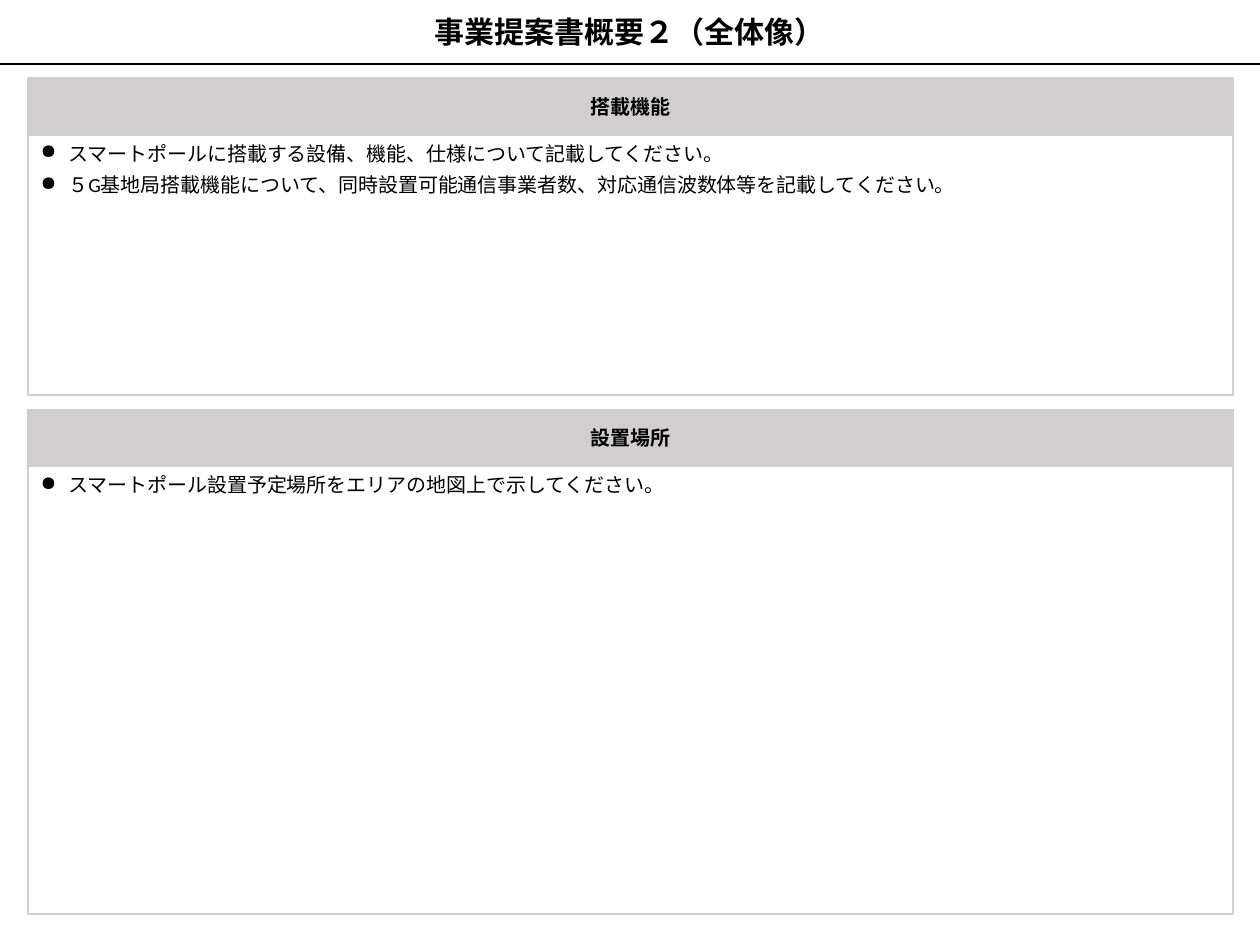
from dataclasses import dataclass

from lxml import etree
from pptx import Presentation
from pptx.dml.color import RGBColor
from pptx.enum.shapes import MSO_CONNECTOR, MSO_SHAPE
from pptx.enum.text import MSO_ANCHOR, PP_ALIGN
from pptx.oxml.ns import qn
from pptx.shapes.autoshape import Shape
from pptx.slide import Slide
from pptx.util import Inches, Pt

RECTANGLE = MSO_SHAPE.RECTANGLE
STRAIGHT = MSO_CONNECTOR.STRAIGHT
TOP, MIDDLE = MSO_ANCHOR.TOP, MSO_ANCHOR.MIDDLE
LEFT, CENTER = PP_ALIGN.LEFT, PP_ALIGN.CENTER

BLACK, WHITE, GRAY = "000000", "FFFFFF", "D0CECE"
PAGE_WIDTH, PAGE_HEIGHT = 14, 10.5
TITLE_HEIGHT = 0.71
PANEL_LEFT, PANEL_WIDTH = 0.31, 13.39
HEADER_HEIGHT = 0.63
BULLET_INDENT = 0.31


@dataclass(frozen=True)
class Panel:
    heading: str
    items: tuple[str, ...]
    top: float
    body_height: float


PANELS = (
    Panel(
        "搭載機能",
        (
            "スマートポールに搭載する設備、機能、仕様について記載してください。",
            "５G基地局搭載機能について、同時設置可能通信事業者数、対応通信波数体等を記載してください。",
        ),
        0.87,
        2.89,
    ),
    Panel(
        "設置場所",
        ("スマートポール設置予定場所をエリアの地図上で示してください。",),
        4.55,
        4.98,
    ),
)


def color(value: str) -> RGBColor:
    return RGBColor.from_string(value)


def add_box(page: Slide, left: float, top: float, width: float, height: float,
            fill: str, line: str, weight: float) -> Shape:
    box = page.shapes.add_shape(
        RECTANGLE, Inches(left), Inches(top), Inches(width), Inches(height))
    box.shadow.inherit = False
    box.fill.solid()
    box.fill.fore_color.rgb = color(fill)
    box.line.color.rgb = color(line)
    box.line.width = Pt(weight)
    return box


def write_text(box: Shape, *lines: str, font: str = "Calibri", size: float = 16,
               bold: bool = False, align: PP_ALIGN = CENTER,
               anchor: MSO_ANCHOR = MIDDLE, wrap: bool = True,
               margins: tuple[float, float] = (0.14, 0.07),
               bullet: str = "") -> None:
    frame = box.text_frame
    frame.word_wrap = wrap
    frame.vertical_anchor = anchor
    frame.margin_left = frame.margin_right = Inches(margins[0])
    frame.margin_top = frame.margin_bottom = Inches(margins[1])
    for index, line in enumerate(lines):
        para = frame.add_paragraph() if index else frame.paragraphs[0]
        para.alignment = align
        span = para.add_run()
        span.text = line
        span.font.name = font
        span.font.size = Pt(size)
        span.font.bold = bold
        span.font.color.rgb = color(BLACK)
        if bullet:
            para.space_before = Pt(6)
            properties = para._p.get_or_add_pPr()
            properties.set("marL", str(Inches(BULLET_INDENT)))
            properties.set("indent", str(-Inches(BULLET_INDENT)))
            etree.SubElement(properties, qn("a:buChar"), char=bullet)


def add_title(page: Slide, title: str) -> None:
    box = add_box(page, 0, 0, PAGE_WIDTH, TITLE_HEIGHT, WHITE, WHITE, 1)
    write_text(box, title, font="Arial", size=24, bold=True, margins=(0.1, 0.05))
    rule = page.shapes.add_connector(
        STRAIGHT, 0, Inches(TITLE_HEIGHT), Inches(PAGE_WIDTH), Inches(TITLE_HEIGHT))
    rule.line.color.rgb = color(BLACK)
    rule.line.width = Pt(1.5)
    etree.SubElement(rule._element.spPr, qn("a:effectLst"))


def add_panel(page: Slide, panel: Panel) -> None:
    header = add_box(page, PANEL_LEFT, panel.top, PANEL_WIDTH, HEADER_HEIGHT,
                     GRAY, GRAY, 1.5)
    write_text(header, panel.heading, bold=True, wrap=False)
    body = add_box(page, PANEL_LEFT, panel.top + HEADER_HEIGHT, PANEL_WIDTH,
                   panel.body_height, WHITE, GRAY, 1.5)
    write_text(body, *panel.items, align=LEFT, anchor=TOP, bullet="●")


def main() -> None:
    deck = Presentation()
    deck.slide_width = Inches(PAGE_WIDTH)
    deck.slide_height = Inches(PAGE_HEIGHT)
    page = deck.slides.add_slide(deck.slide_layouts[6])
    add_title(page, "事業提案書概要２（全体像）")
    for panel in PANELS:
        add_panel(page, panel)
    deck.save("out.pptx")


if __name__ == "__main__":
    main()
